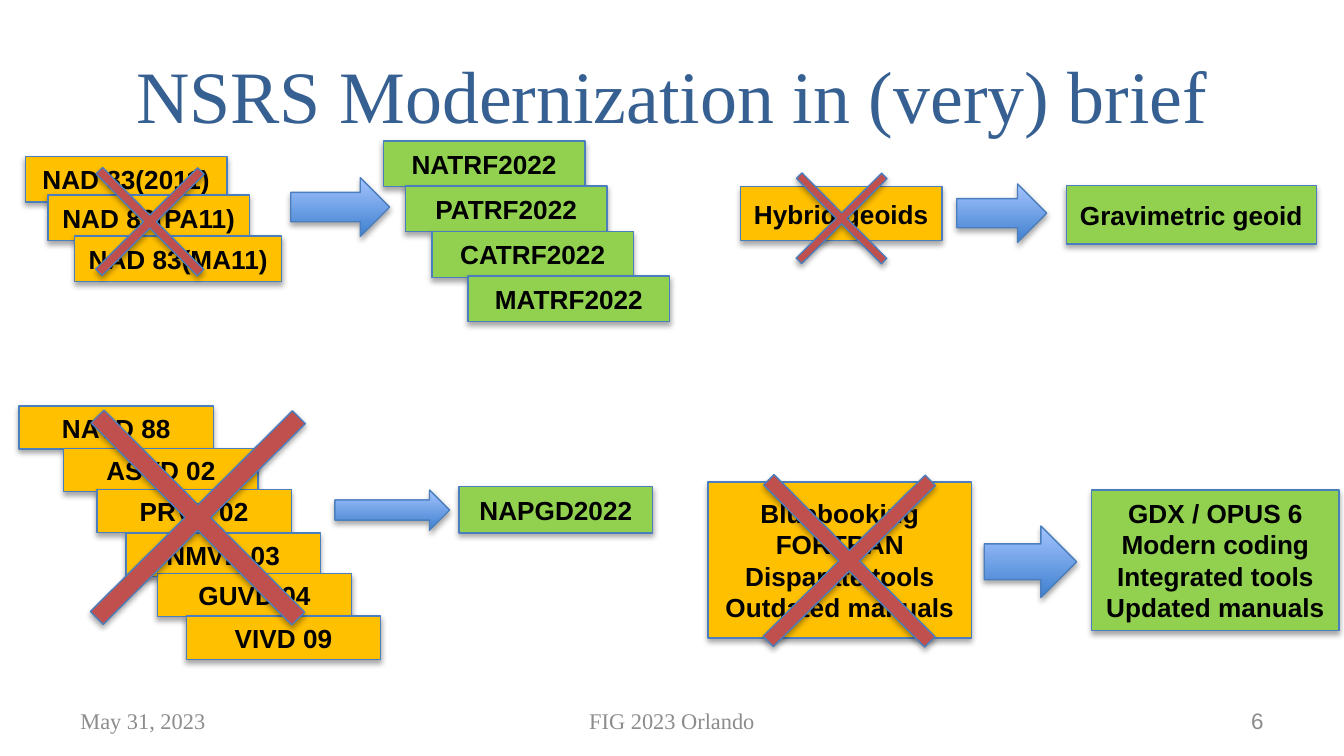
from lxml import etree
from pptx import Presentation
from pptx.dml.color import RGBColor
from pptx.enum.shapes import MSO_SHAPE
from pptx.enum.text import MSO_ANCHOR, PP_ALIGN
from pptx.oxml.ns import qn
from pptx.util import Pt

RECT, ARROW, PLUS = MSO_SHAPE.RECTANGLE, MSO_SHAPE.RIGHT_ARROW, MSO_SHAPE.CROSS
LEFT, CENTER, RIGHT = PP_ALIGN.LEFT, PP_ALIGN.CENTER, PP_ALIGN.RIGHT
MIDDLE = MSO_ANCHOR.MIDDLE

THEME = {
    "old": "FFC000", "new": "92D050", "cross": "C0504D", "outline": "4B7EBC",
    "arrow_low": "3F80CE", "arrow_high": "A4C4FF", "shadow": "000000",
    "title": "376092", "footer": "8C8C8C", "label": "000000",
    "sans": "Arial", "serif": "Times New Roman",
    "title_size": 39.6, "label_size": 14, "footer_size": 12,
}

# Content: lengths in points, frames as (left, top, width, height)
TITLE = ("NSRS Modernization in (very) brief", (36, 16.5, 648, 68))
FOOTERS = [
    ("May 31, 2023", (36, 375.4, 168, 21.6), LEFT, "serif"),
    ("FIG 2023 Orlando", (246, 375.4, 228, 21.6), CENTER, "serif"),
    ("6", (516, 375.4, 168, 21.6), RIGHT, "sans"),
]
BOXES = [
    ("old", (396.7, 100, 108, 29), ["Hybrid geoids"]),
    ("new", (245.9, 260.8, 103.8, 24.8), ["NAPGD2022"]),
    ("new", (571.2, 99.3, 134, 31.5), ["Gravimetric geoid"]),
    ("old", (379.3, 258.2, 141.2, 83.6),
     ["Bluebooking", "FORTRAN", "Disparate tools", "Outdated manuals"]),
    ("new", (584.9, 262.5, 132.5, 75.3),
     ["GDX / OPUS 6", "Modern coding", "Integrated tools", "Updated manuals"]),
]
# Cascades: colour, box height, then label, left, top, width of each box
CASCADES = [
    ("old", 24.5, [("NAD 83(2011)", 13.6, 83.8, 108), ("NAD 83(PA11)", 25.7, 104.4, 108),
                   ("NAD 83(MA11)", 40, 126.5, 111)]),
    ("new", 24.5, [("NATRF2022", 205.4, 75.6, 108), ("PATRF2022", 217.2, 99.6, 108),
                   ("CATRF2022", 231.4, 124.1, 108), ("MATRF2022", 250.8, 147.8, 108)]),
    ("old", 23.2, [("NAVD 88", 10.2, 217.5, 104.2), ("ASVD 02", 34.1, 240.3, 104.2),
                   ("PRVD 02", 51.9, 262.3, 104.2), ("NMVD 03", 67.5, 285.6, 104.2),
                   ("GUVD 04", 84.3, 307.1, 104.2), ("VIVD 09", 99.8, 330.1, 104.2)]),
]
ARROWS = [
    (155.8, 95.2, 53, 31.5), (512.6, 98.6, 48.2, 31.3),
    (179.4, 262.5, 61.5, 21.6), (527.3, 281.8, 49.5, 38.3),
]
# Crosses: centre x, centre y, arm span
CROSSES = [(80.3, 118.8, 77), (450.9, 117, 64.5), (106, 277.3, 152.6), (455, 300.5, 122.4)]
CROSS_TURN, CROSS_NOTCH = 45.2, 0.468


def colour(key):
    return RGBColor.from_string(THEME[key])


def write(shape, lines, align, font, size, ink, bold=False):
    frame = shape.text_frame
    frame.word_wrap = True
    frame.vertical_anchor = MIDDLE
    for i, line in enumerate(lines):
        paragraph = frame.paragraphs[0] if i == 0 else frame.add_paragraph()
        paragraph.alignment = align
        run = paragraph.add_run()
        run.text = line
        run.font.name, run.font.size, run.font.bold = THEME[font], Pt(THEME[size]), bold
        run.font.color.rgb = colour(ink)


def add_text(text, frame, *style):
    write(slide.shapes.add_textbox(*map(Pt, frame)), [text], *style)


def add_solid(parent, preset, frame, fill=None):
    """Outlined shape with a soft shadow falling straight down."""
    shape = parent.add_shape(preset, *map(Pt, frame))
    if fill:
        shape.fill.solid()
        shape.fill.fore_color.rgb = colour(fill)
    else:
        shape.fill.gradient()
        shape.fill.gradient_angle = 90
        for stop, key in zip(shape.fill.gradient_stops, ("arrow_low", "arrow_high")):
            stop.color.rgb = colour(key)
    shape.line.color.rgb = colour("outline")
    shape.line.width = Pt(0.75)
    shape.shadow.inherit = False
    effects = shape.element.spPr.find(qn("a:effectLst"))
    shadow = etree.SubElement(effects, qn("a:outerShdw"), blurRad=str(Pt(3.1)),
                              dist=str(Pt(1.8)), dir="5400000", rotWithShape="0")
    tint = etree.SubElement(shadow, qn("a:srgbClr"), val=THEME["shadow"])
    etree.SubElement(tint, qn("a:alpha"), val="35000")
    return shape


def add_box(parent, kind, frame, lines):
    box = add_solid(parent, RECT, frame, kind)
    box.text_frame.margin_left = box.text_frame.margin_right = Pt(4)
    write(box, lines, CENTER, "sans", "label_size", "label", True)


prs = Presentation()
prs.slide_width, prs.slide_height = Pt(720), Pt(405)
slide = prs.slides.add_slide(prs.slide_layouts[6])

# Title and footer
add_text(*TITLE, CENTER, "serif", "title_size", "title")
for text, frame, align, font in FOOTERS:
    add_text(text, frame, align, font, "footer_size", "footer")

# Single boxes
for kind, frame, lines in BOXES:
    add_box(slide.shapes, kind, frame, lines)

# Cascades of overlapping boxes, one group each
for kind, height, datums in CASCADES:
    cascade = slide.shapes.add_group_shape()
    for label, left, top, width in datums:
        add_box(cascade.shapes, kind, (left, top, width, height), [label])

# Arrows from old to new
for frame in ARROWS:
    add_solid(slide.shapes, ARROW, frame)

# Crosses over what is retired
for x, y, span in CROSSES:
    cross = add_solid(slide.shapes, PLUS, (x - span / 2, y - span / 2, span, span), "cross")
    cross.adjustments[0] = CROSS_NOTCH
    cross.rotation = CROSS_TURN

prs.save("out.pptx")
